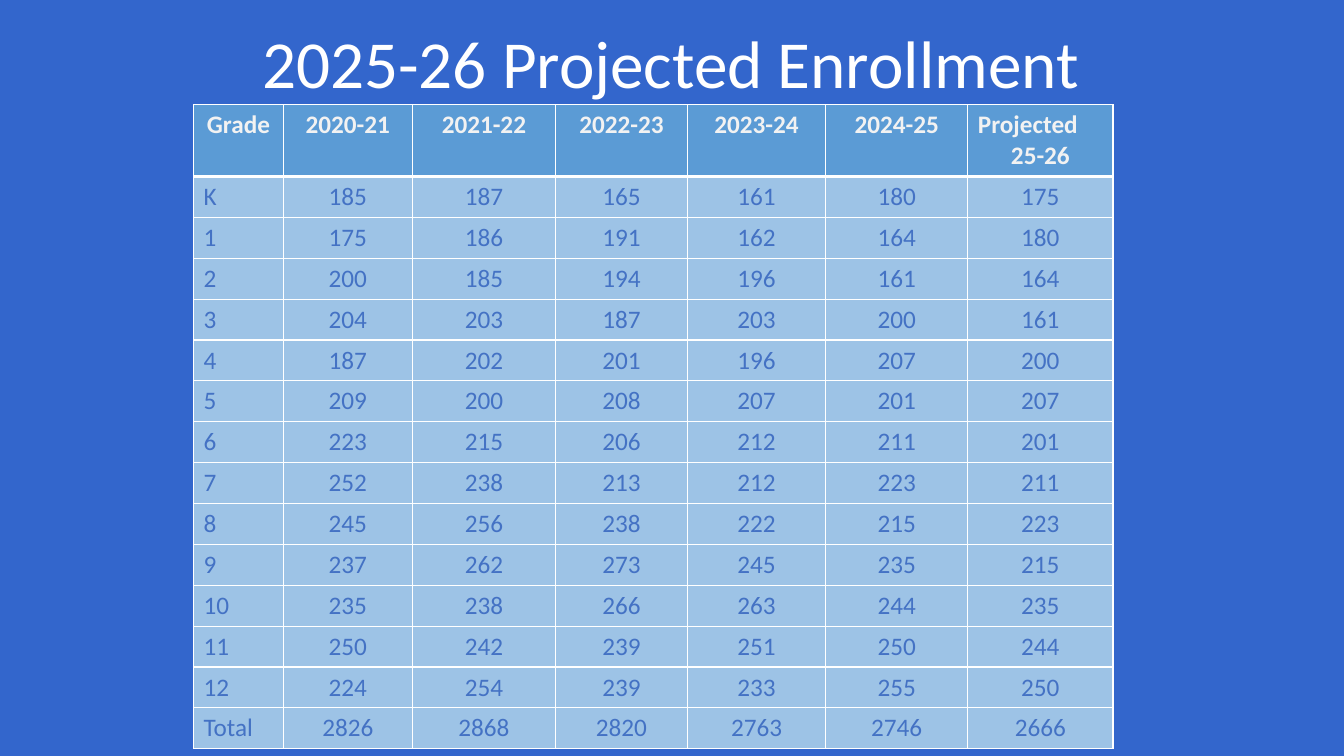
import pptx
import pptx.dml.color
import pptx.enum.text
import pptx.oxml
import pptx.oxml.ns
import pptx.util

RGBColor = pptx.dml.color.RGBColor
PP_ALIGN = pptx.enum.text.PP_ALIGN
Inches = pptx.util.Inches

BACKGROUND = RGBColor(0x33, 0x66, 0xCC)
WHITE = RGBColor(0xFF, 0xFF, 0xFF)
HEADING_TEXT = RGBColor(0xF2, 0xF2, 0xF2)
HEADING_FILL = RGBColor(0x5B, 0x9B, 0xD5)
COUNT_TEXT = RGBColor(0x44, 0x72, 0xC4)
COUNT_FILL = RGBColor(0x9D, 0xC3, 0xE6)
FONT = "Calibri"

SLIDE_WIDTH, SLIDE_HEIGHT = 13.33, 7.5
TITLE_BOX = (0.17, 0.21, 12.97, 0.82)
TABLE_BOX = (1.92, 1.04, 9.12, 6.38)
COLUMN_WIDTHS = (0.89, 1.28, 1.42, 1.31, 1.37, 1.41, 1.44)
HEADING_SHARE = 0.11

HEADINGS = ("Grade", "2020-21", "2021-22", "2022-23", "2023-24", "2024-25",
            "Projected\n25-26")
ENROLLMENT = (
    ("K", 185, 187, 165, 161, 180, 175),
    ("1", 175, 186, 191, 162, 164, 180),
    ("2", 200, 185, 194, 196, 161, 164),
    ("3", 204, 203, 187, 203, 200, 161),
    ("4", 187, 202, 201, 196, 207, 200),
    ("5", 209, 200, 208, 207, 201, 207),
    ("6", 223, 215, 206, 212, 211, 201),
    ("7", 252, 238, 213, 212, 223, 211),
    ("8", 245, 256, 238, 222, 215, 223),
    ("9", 237, 262, 273, 245, 235, 215),
    ("10", 235, 238, 266, 263, 244, 235),
    ("11", 250, 242, 239, 251, 250, 244),
    ("12", 224, 254, 239, 233, 255, 250),
    ("Total", 2826, 2868, 2820, 2763, 2746, 2666),
)


def style_paragraph(paragraph, size, color, bold, alignment):
    paragraph.alignment = alignment
    paragraph.font.name = FONT
    paragraph.font.size = pptx.util.Pt(size)
    paragraph.font.bold = bold
    paragraph.font.color.rgb = color


def add_title(slide, box):
    title = slide.shapes.title
    title.left, title.top, title.width, title.height = map(Inches, box)
    frame = title.text_frame
    frame.text = "2025-26 Projected Enrollment"
    frame.word_wrap = True
    frame.auto_size = pptx.enum.text.MSO_AUTO_SIZE.NONE
    frame.vertical_anchor = pptx.enum.text.MSO_ANCHOR.BOTTOM
    frame.margin_bottom = Inches(0.01)
    heading = frame.paragraphs[0]
    heading.line_spacing = 0.9
    style_paragraph(heading, 48, WHITE, False, PP_ALIGN.CENTER)


def set_borders(cell, top, bottom):
    properties = cell._tc.get_or_add_tcPr()
    for side, points in (("L", 1), ("R", 1), ("T", top), ("B", bottom)):
        properties.append(pptx.oxml.parse_xml(
            f'<a:ln{side} {pptx.oxml.ns.nsdecls("a")} w="{pptx.util.Pt(points)}">'
            f'<a:solidFill><a:srgbClr val="{WHITE}"/></a:solidFill></a:ln{side}>'))


def fill_cell(cell, text, is_heading, alignment, top, bottom):
    cell.text = str(text)
    set_borders(cell, top, bottom)
    cell.fill.solid()
    cell.fill.fore_color.rgb = HEADING_FILL if is_heading else COUNT_FILL
    color = HEADING_TEXT if is_heading else COUNT_TEXT
    for paragraph in cell.text_frame.paragraphs:
        style_paragraph(paragraph, 18, color, is_heading, alignment)


def add_enrollment_table(slide, box):
    left, top, width, height = box
    rows = (HEADINGS,) + ENROLLMENT
    enrollment = slide.shapes.add_table(
        len(rows), len(HEADINGS), *map(Inches, box)).table
    enrollment.horz_banding = False
    for column, share in zip(enrollment.columns, COLUMN_WIDTHS):
        column.width = Inches(width * share / sum(COLUMN_WIDTHS))
    heading_height = height * HEADING_SHARE
    grade_height = (height - heading_height) / len(ENROLLMENT)
    for r, values in enumerate(rows):
        is_heading = r == 0
        enrollment.rows[r].height = Inches(
            heading_height if is_heading else grade_height)
        for c, value in enumerate(values):
            is_grade = c == 0 and not is_heading
            alignment = PP_ALIGN.LEFT if is_grade else PP_ALIGN.CENTER
            fill_cell(enrollment.cell(r, c), value, is_heading, alignment,
                      3 if r == 1 else 1, 3 if is_heading else 1)
    projected = enrollment.cell(0, len(HEADINGS) - 1).text_frame
    projected.paragraphs[0].alignment = PP_ALIGN.LEFT


def main():
    presentation = pptx.Presentation()
    presentation.slide_width = Inches(SLIDE_WIDTH)
    presentation.slide_height = Inches(SLIDE_HEIGHT)
    slide = presentation.slides.add_slide(
        presentation.slide_layouts.get_by_name("Title Only"))
    slide.background.fill.solid()
    slide.background.fill.fore_color.rgb = BACKGROUND
    add_title(slide, TITLE_BOX)
    add_enrollment_table(slide, TABLE_BOX)
    presentation.save("out.pptx")


if __name__ == "__main__":
    main()
